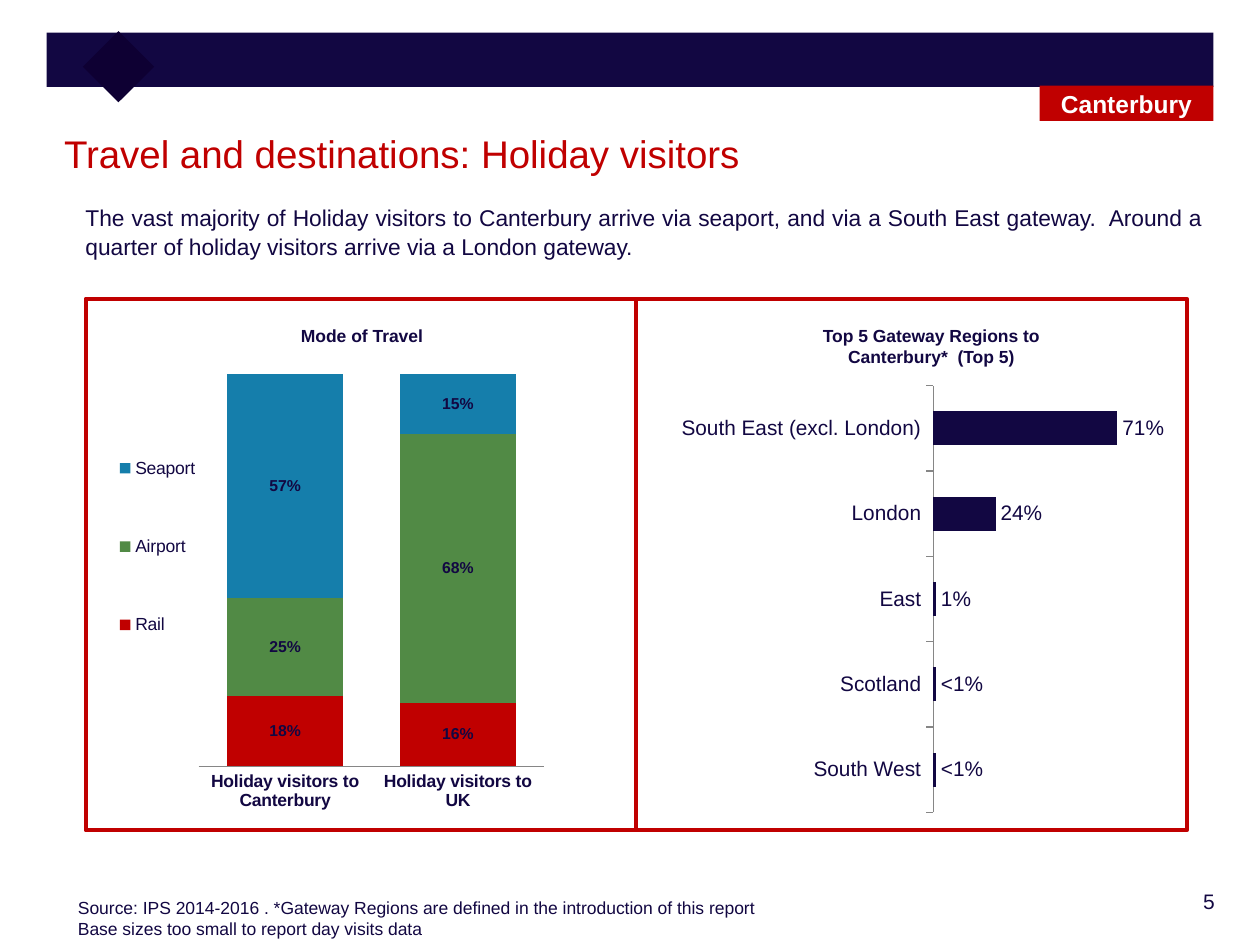
import lxml.etree
import pptx
import pptx.chart.data
import pptx.dml.color
import pptx.enum.chart
import pptx.enum.shapes
import pptx.enum.text
import pptx.oxml.ns
import pptx.util
from pptx.util import Inches

RGB = pptx.dml.color.RGBColor.from_string
CH = pptx.enum.chart
ALIGN = pptx.enum.text.PP_ALIGN
ANCHOR = pptx.enum.text.MSO_ANCHOR

THEME = {
    "font": "Arial",
    "navy": RGB("120742"), "dark": RGB("0E0033"), "red": RGB("C00000"),
    "green": RGB("518A45"), "blue": RGB("157EAB"), "axis": RGB("868686"),
    "white": RGB("FFFFFF"),
    "title": 22, "tag": 14, "body": 13, "label": 12, "small": 10, "value": 9,
}


def add_text(text, box, shape=None, size="small", color="navy", bold=False,
             align=ALIGN.LEFT, anchor=ANCHOR.TOP, spacing=None):
    """Write text into a shape, or into a new text box; one paragraph per line."""
    sp = shape or s.shapes.add_textbox(*map(Inches, box))
    tf = sp.text_frame
    tf.word_wrap = True
    tf.vertical_anchor = anchor
    tf.text = text
    for p in tf.paragraphs:
        p.alignment = align
        p.line_spacing = spacing
        p.font.name = THEME["font"]
        p.font.size = pptx.util.Pt(THEME[size])
        p.font.bold = bold
        p.font.color.rgb = THEME[color]
    return sp


def set_layout(parent, index, x, y, w, h, inner=False):
    """Give a plot area or legend a manual layout, in fractions of the chart."""
    qn = pptx.oxml.ns.qn
    for old in parent.findall(qn("c:layout")):
        parent.remove(old)
    layout = lxml.etree.Element(qn("c:layout"))
    manual = lxml.etree.SubElement(layout, qn("c:manualLayout"))
    parts = [("layoutTarget", "inner")] if inner else []
    parts += [("xMode", "edge"), ("yMode", "edge"),
              ("x", x), ("y", y), ("w", w), ("h", h)]
    for name, val in parts:
        lxml.etree.SubElement(manual, qn("c:" + name)).set("val", str(val))
    parent.insert(index, layout)


prs = pptx.Presentation()
prs.slide_width, prs.slide_height = Inches(10), Inches(7.5)
s = prs.slides.add_slide(prs.slide_layouts[6])
RECT = pptx.enum.shapes.MSO_SHAPE.RECTANGLE

# Header band, diamond and place tag
for box, color, angle, text in (
    ((0.37, 0.26, 9.26, 0.43), "navy", 0, ""),
    ((0.74, 0.33, 0.4, 0.4), "dark", 45, ""),
    ((8.25, 0.68, 1.38, 0.28), "red", 0, "Canterbury"),
):
    sp = s.shapes.add_shape(RECT, *map(Inches, box))
    sp.shadow.inherit = False
    sp.rotation = angle
    sp.fill.solid()
    sp.fill.fore_color.rgb = THEME[color]
    sp.line.fill.background()
    if text:
        add_text(text, box, shape=sp, size="tag", color="white", bold=True,
                 align=ALIGN.CENTER, anchor=ANCHOR.MIDDLE)

# Title and introduction
sp = add_text("Travel and destinations: Holiday visitors", (0.41, 0.95, 9.21, 0.61),
              size="title", color="red")
sp.text_frame.margin_top = Inches(0.08)
add_text("The vast majority of Holiday visitors to Canterbury arrive via seaport, "
         "and via a South East gateway.  Around a quarter of holiday visitors "
         "arrive via a London gateway.",
         (0.58, 1.55, 9.05, 0.74), size="body", align=ALIGN.JUSTIFY, spacing=1.07)

# Chart headings
add_text("Mode of Travel", (2.29, 2.53, 1.47, 0.31), bold=True)
add_text("Top 5 Gateway Regions to Canterbury*  (Top 5)", (6.33, 2.53, 2.12, 0.46),
         bold=True, align=ALIGN.CENTER)

# Mode of travel: stacked columns
cd = pptx.chart.data.CategoryChartData(number_format="0%")
cd.categories = ["Holiday visitors to Canterbury", "Holiday visitors to UK"]
cd.add_series("Rail", (0.18, 0.16))
cd.add_series("Airport", (0.25, 0.68))
cd.add_series("Seaport", (0.57, 0.15))
mode = s.shapes.add_chart(CH.XL_CHART_TYPE.COLUMN_STACKED_100, Inches(0.68), Inches(2.76),
                          Inches(3.8), Inches(3.76), cd).chart

# Gateway regions: bars
cd = pptx.chart.data.CategoryChartData(number_format="0%")
cd.categories = ["South East (excl. London)", "London", "East", "Scotland", "South West"]
cd.add_series("Series 1", (0.71, 0.24, 0.01, 0.01, 0.01))
gateway = s.shapes.add_chart(CH.XL_CHART_TYPE.BAR_CLUSTERED, Inches(5.38), Inches(2.99),
                             Inches(3.86), Inches(3.53), cd).chart

# Formats of both charts
for chart, top, gap, size, value_size, bold, tick, colors, area in (
    (mode, 1, 49, "small", "value", True, CH.XL_TICK_MARK.NONE,
     ("red", "green", "blue"), (0.236, 0.056, 0.722, 0.828)),
    (gateway, 0.8, 150, "label", "label", False, CH.XL_TICK_MARK.OUTSIDE,
     ("navy",), (0.53, 0.02, 0.43, 0.96)),
):
    chart.has_title = False
    chart.has_legend = chart is mode
    chart.font.name = THEME["font"]
    chart.font.size = pptx.util.Pt(THEME[size])
    chart.font.color.rgb = THEME["navy"]
    set_layout(chart.plots[0]._element.getparent(), 0, *area, inner=True)

    va, ca = chart.value_axis, chart.category_axis
    va.minimum_scale, va.maximum_scale = 0, top
    va.has_major_gridlines = False
    va.visible = False
    ca.major_tick_mark = tick
    ca.format.line.color.rgb = THEME["axis"]
    ca.tick_labels.font.size = pptx.util.Pt(THEME[size])
    ca.tick_labels.font.bold = bold

    plot = chart.plots[0]
    plot.gap_width = gap
    plot.vary_by_categories = False
    for ser, color in zip(plot.series, colors):
        ser.format.fill.solid()
        ser.format.fill.fore_color.rgb = THEME[color]
        dl = ser.data_labels
        dl.show_value = True
        dl.number_format = "0%"
        dl.number_format_is_linked = False
        dl.font.name = THEME["font"]
        dl.font.size = pptx.util.Pt(THEME[value_size])
        dl.font.bold = bold
        dl.font.color.rgb = THEME["navy"]

# Legend of the columns
mode.plots[0].overlap = 100
mode.legend.position = CH.XL_LEGEND_POSITION.LEFT
mode.legend.include_in_layout = False
mode.legend.font.size = pptx.util.Pt(THEME["small"])
set_layout(mode.legend._element, 1, 0.06, 0.11, 0.18, 0.62)

# Order and special labels of the bars
gateway.category_axis.reverse_order = True
bars = gateway.plots[0].series[0]
bars.data_labels.position = CH.XL_LABEL_POSITION.OUTSIDE_END
for i in (3, 4):
    label = bars.points[i].data_label
    label.position = CH.XL_LABEL_POSITION.OUTSIDE_END
    label.text_frame.text = "<1%"
    r = label.text_frame.paragraphs[0].runs[0]
    r.font.name = THEME["font"]
    r.font.size = pptx.util.Pt(THEME["label"])
    r.font.color.rgb = THEME["navy"]

# Frames around the charts
for i in range(2):
    sp = s.shapes.add_shape(RECT, Inches(0.68 + 4.37 * i), Inches(2.37),
                            Inches(4.37), Inches(4.22))
    sp.shadow.inherit = False
    sp.fill.background()
    sp.line.color.rgb = THEME["red"]
    sp.line.width = pptx.util.Pt(2.25)

# Source and page number
add_text("Source: IPS 2014-2016 . *Gateway Regions are defined in the introduction of "
         "this report\nBase sizes too small to report day visits data",
         (0.52, 7.07, 9.08, 0.44))
add_text("5", (8.53, 7, 1.21, 0.36), size="label", align=ALIGN.RIGHT)

prs.save("out.pptx")
